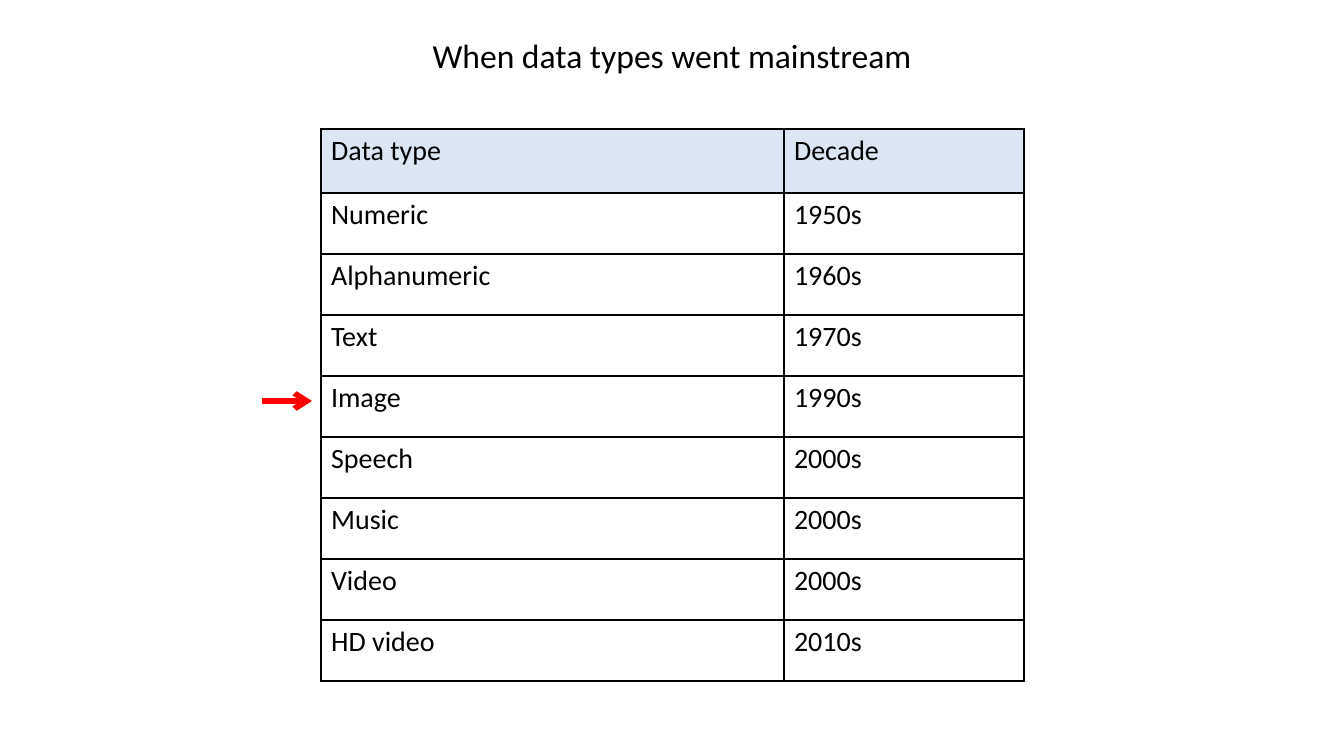
import pptx
import pptx.util
import pptx.dml.color
import pptx.enum.shapes
import pptx.enum.text
import pptx.oxml.ns
import lxml.etree

SCALE = 914400 / 100.8
qn = pptx.oxml.ns.qn


def px(n):
    return pptx.util.Emu(round(n * SCALE))


def color(code):
    return pptx.dml.color.RGBColor.from_string(code)


deck = pptx.Presentation()
deck.slide_width, deck.slide_height = px(1344), px(756)
slide = deck.slides.add_slide(deck.slide_layouts[5])

title = slide.shapes.title
title.left, title.top, title.width, title.height = px(168), px(-8), px(1008), px(126)
title.text_frame.vertical_anchor = pptx.enum.text.MSO_ANCHOR.MIDDLE
para = title.text_frame.paragraphs[0]
para.alignment = pptx.enum.text.PP_ALIGN.CENTER
run = para.add_run()
run.text = "When data types went mainstream"
run.font.size = pptx.util.Pt(24)
run.font.name = "Calibri"
run.font.color.rgb = color("000000")

data = [
    ("Data type", "Decade"),
    ("Numeric", "1950s"),
    ("Alphanumeric", "1960s"),
    ("Text", "1970s"),
    ("Image", "1990s"),
    ("Speech", "2000s"),
    ("Music", "2000s"),
    ("Video", "2000s"),
    ("HD video", "2010s"),
]
last = len(data) - 1
table = slide.shapes.add_table(len(data), 2, px(321), px(129), px(703), px(552)).table
table.first_row = table.horz_banding = False
table.columns[0].width, table.columns[1].width = px(463), px(240)

for r, words in enumerate(data):
    table.rows[r].height = px(61 if r else 64)
    for c, word in enumerate(words):
        cell = table.cell(r, c)
        para = cell.text_frame.paragraphs[0]
        gap = lxml.etree.SubElement(para._p.get_or_add_pPr(), qn("a:spcBef"))
        lxml.etree.SubElement(gap, qn("a:spcPct"), val="20000")
        run = para.add_run()
        run.text = word
        run.font.size = pptx.util.Pt(20)
        run.font.name = "Calibri"
        run.font.color.rgb = color("000000")

        props = cell._tc.get_or_add_tcPr()
        edges = {"L": c == 0, "R": c == 1, "T": r == 0, "B": r == last}
        for side, outer in edges.items():
            width = pptx.util.Pt(2.25 if outer else 1)
            line = lxml.etree.SubElement(props, qn("a:ln" + side), w=str(width))
            fill = lxml.etree.SubElement(line, qn("a:solidFill"))
            lxml.etree.SubElement(fill, qn("a:srgbClr"), val="000000")
        if r == 0:
            cell.fill.solid()
            cell.fill.fore_color.rgb = color("DCE6F2")
        else:
            cell.fill.background()

arrow = slide.shapes.add_connector(
    pptx.enum.shapes.MSO_CONNECTOR.STRAIGHT, px(262), px(401), px(312), px(401)
)
arrow.line.color.rgb = color("FF0000")
arrow.line.width = pptx.util.Pt(4)
lxml.etree.SubElement(arrow.line._get_or_add_ln(), qn("a:tailEnd"), type="arrow")
lxml.etree.SubElement(arrow._element.spPr, qn("a:effectLst"))

deck.save("out.pptx")
